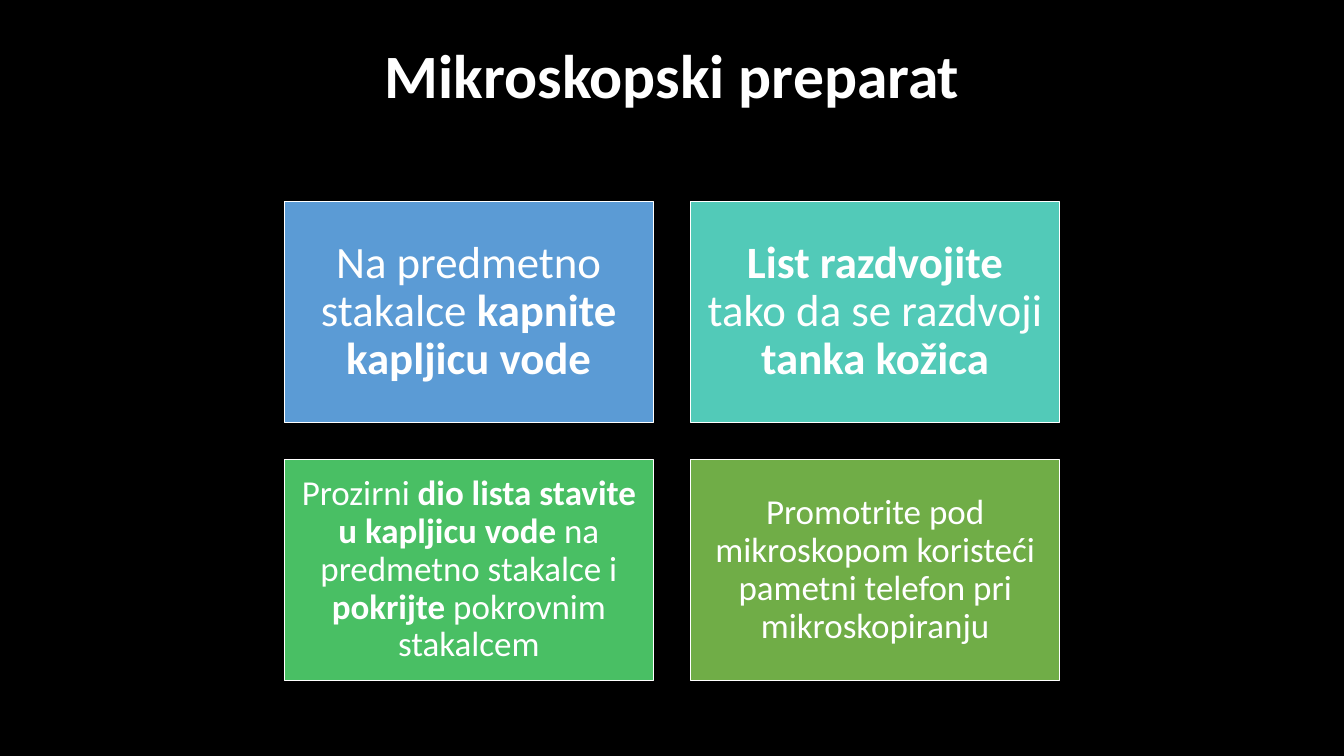
import pptx
import pptx.dml.color
import pptx.enum.shapes
import pptx.enum.text
import pptx.util

Inches = pptx.util.Inches
ANCHOR = pptx.enum.text.MSO_ANCHOR

SLIDE_W, SLIDE_H = 13.33, 7.5
WHITE = "FFFFFF"
TITLE = [("Mikroskopski preparat", True)]

# Each step: fill colour, text size, inset, runs as (text, bold)
STEPS = [
    ("5B9BD5", 32, 0.13, [("Na predmetno stakalce ", False),
                          ("kapnite kapljicu vode", True)]),
    ("52CAB8", 32, 0.13, [("List razdvojite", True),
                          (" tako da se razdvoji ", False),
                          ("tanka kožica", True)]),
    ("49BF64", 25, 0.1, [("Prozirni ", False),
                         ("dio lista stavite u kapljicu vode ", True),
                         ("na predmetno stakalce i ", False),
                         ("pokrijte", True),
                         (" pokrovnim stakalcem", False)]),
    ("70AD47", 25, 0.1, [("Promotrite pod mikroskopom koristeći pametni "
                          "telefon pri mikroskopiranju", False)]),
]

COLUMNS = 2
STEP_W, STEP_H, GAP = 3.66, 2.19, 0.37
GRID_LEFT = (SLIDE_W - COLUMNS * STEP_W - GAP) / 2
GRID_TOP = 2


def paint(colour_format, colour):
    colour_format.rgb = pptx.dml.color.RGBColor.from_string(colour)


def write(shape, runs, size, side=0.1, top=0.05, anchor=ANCHOR.MIDDLE):
    frame = shape.text_frame
    frame.word_wrap = True
    frame.vertical_anchor = anchor
    frame.margin_left = frame.margin_right = Inches(side)
    frame.margin_top = frame.margin_bottom = Inches(top)
    paragraph = frame.paragraphs[0]
    paragraph.alignment = pptx.enum.text.PP_ALIGN.CENTER
    paragraph.line_spacing = 0.9
    for text, bold in runs:
        run = paragraph.add_run()
        run.text = text
        run.font.name = "Calibri"
        run.font.size = pptx.util.Pt(size)
        run.font.bold = bold
        paint(run.font.color, WHITE)


def add_step(slide, index, fill, size, inset, runs):
    row, column = divmod(index, COLUMNS)
    step = slide.shapes.add_shape(
        pptx.enum.shapes.MSO_SHAPE.RECTANGLE,
        Inches(GRID_LEFT + column * (STEP_W + GAP)),
        Inches(GRID_TOP + row * (STEP_H + GAP)),
        Inches(STEP_W), Inches(STEP_H))
    step.shadow.inherit = False
    step.fill.solid()
    paint(step.fill.fore_color, fill)
    paint(step.line.color, WHITE)
    step.line.width = pptx.util.Pt(1)
    write(step, runs, size, side=inset, top=inset)


def main():
    deck = pptx.Presentation()
    deck.slide_width, deck.slide_height = Inches(SLIDE_W), Inches(SLIDE_H)
    slide = deck.slides.add_slide(deck.slide_layouts[6])
    slide.background.fill.solid()
    paint(slide.background.fill.fore_color, "000000")

    title = slide.shapes.add_textbox(
        Inches(0.92), Inches(0.4), Inches(11.5), Inches(1.45))
    write(title, TITLE, 44, anchor=ANCHOR.TOP)

    for index, step in enumerate(STEPS):
        add_step(slide, index, *step)
    deck.save("out.pptx")


if __name__ == "__main__":
    main()
